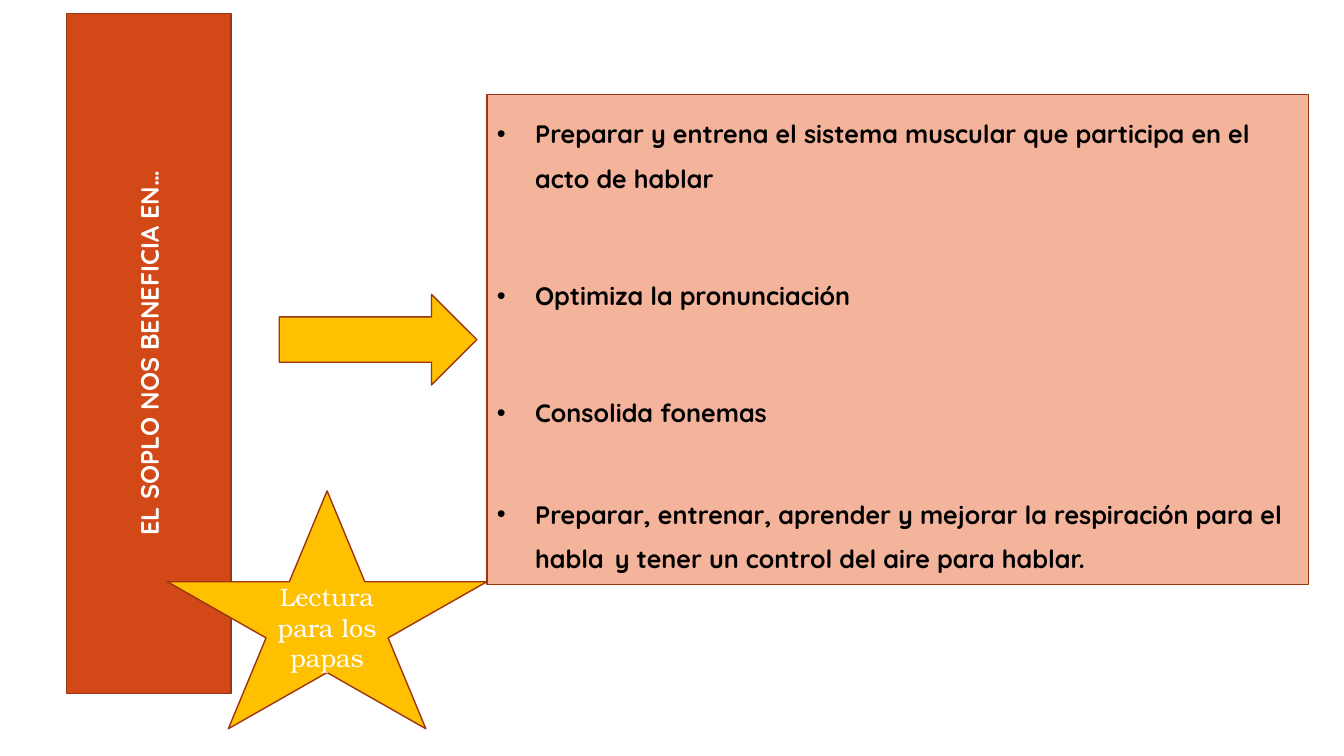
from dataclasses import dataclass

from lxml import etree
from pptx import Presentation
from pptx import util as u
from pptx.dml.color import RGBColor
from pptx.enum import shapes, text
from pptx.oxml import ns

COLORS = {
    "rust": "D34817",
    "outline": "9C3511",
    "gold": "FFC000",
    "salmon": "F4B39B",
    "white": "FFFFFF",
    "black": "000000",
}
BODY_FONT, STAR_FONT = "Quicksand", "TeX Gyre Bonum"
TEXT_SIZE, WIDE_SPACE_SIZE = 18, 28


@dataclass(frozen=True)
class Area:
    """Position and size in percent of the slide's width and height."""
    left: float
    top: float
    width: float
    height: float


@dataclass(frozen=True)
class Figure:
    kind: shapes.MSO_SHAPE
    area: Area
    fill: str


@dataclass(frozen=True)
class Benefit:
    pieces: tuple[str, ...]
    line_spacing: float = 1.5


TITLE_AREA = Area(-14.25, 35.87, 50.63, 21.73)
ARROW = Figure(shapes.MSO_SHAPE.RIGHT_ARROW, Area(20.78, 38.93, 14.7, 12), "gold")
PANEL = Figure(shapes.MSO_SHAPE.RECTANGLE, Area(36.23, 12.53, 61.13, 64.8), "salmon")
STAR = Figure(shapes.MSO_SHAPE.STAR_5_POINT, Area(12.45, 64.93, 23.78, 31.47), "gold")

BENEFITS = (
    Benefit(("Preparar y entrena el sistema muscular que participa en el acto de hablar",)),
    Benefit(("Optimiza la pronunciación",)),
    Benefit(("Consolida fonemas",)),
    Benefit(("Preparar, entrenar, aprender y mejorar la respiración para el habla", " ",
             "y tener un control del aire para hablar."), 1.0),
)

presentation = Presentation()
presentation.slide_width = u.Inches(13.33)
presentation.slide_height = u.Inches(7.5)


def color(name: str) -> RGBColor:
    return RGBColor.from_string(COLORS[name])


def place(area: Area) -> tuple[int, int, int, int]:
    width, height = presentation.slide_width, presentation.slide_height
    return (int(area.left * width / 100), int(area.top * height / 100),
            int(area.width * width / 100), int(area.height * height / 100))


def paint(shape, fill: str) -> None:
    shape.fill.solid()
    shape.fill.fore_color.rgb = color(fill)
    shape.line.color.rgb = color("outline")
    shape.line.width = u.Pt(1)


def add_figure(slide, figure: Figure):
    shape = slide.shapes.add_shape(figure.kind, *place(figure.area))
    shape.shadow.inherit = False
    paint(shape, figure.fill)
    return shape


def format_run(run, font: str, ink: str, bold: bool, size: int = TEXT_SIZE) -> None:
    run.font.name = font
    run.font.size = u.Pt(size)
    run.font.bold = bold
    run.font.color.rgb = color(ink)


def set_label(shape, label: str, font: str, bold: bool) -> None:
    frame = shape.text_frame
    frame.text = label
    frame.word_wrap = True
    frame.auto_size = text.MSO_AUTO_SIZE.NONE
    frame.vertical_anchor = text.MSO_ANCHOR.MIDDLE
    paragraph = frame.paragraphs[0]
    paragraph.alignment = text.PP_ALIGN.CENTER
    format_run(paragraph.runs[0], font, "white", bold)


def add_bullet(paragraph) -> None:
    properties = paragraph._p.get_or_add_pPr()
    properties.set("marL", str(u.Inches(0.38)))
    properties.set("indent", str(-u.Inches(0.38)))
    etree.SubElement(properties, ns.qn("a:buFont")).set("typeface", "Arial")
    etree.SubElement(properties, ns.qn("a:buChar")).set("char", "•")


def fill_benefits(shape, benefits: tuple[Benefit, ...]) -> None:
    frame = shape.text_frame
    frame.word_wrap = True
    frame.vertical_anchor = text.MSO_ANCHOR.MIDDLE
    for index, benefit in enumerate(benefits):
        paragraph = frame.add_paragraph() if index else frame.paragraphs[0]
        paragraph.alignment = text.PP_ALIGN.LEFT
        paragraph.line_spacing = benefit.line_spacing
        if index:
            paragraph.space_before = u.Pt(51)
        add_bullet(paragraph)
        for piece in benefit.pieces:
            run = paragraph.add_run()
            run.text = piece
            size = TEXT_SIZE if piece.strip() else WIDE_SPACE_SIZE
            format_run(run, BODY_FONT, "black", True, size)


# Title in an upright ellipse
slide = presentation.slides.add_slide(presentation.slide_layouts[5])
title = slide.shapes.title
title.left, title.top, title.width, title.height = place(TITLE_AREA)
title.rotation = 270
geometry = etree.SubElement(title._element.spPr, ns.qn("a:prstGeom"))
geometry.set("prst", "ellipse")
etree.SubElement(geometry, ns.qn("a:avLst"))
paint(title, "rust")
set_label(title, "EL SOPLO NOS BENEFICIA EN…", BODY_FONT, True)

# Arrow and list of benefits
add_figure(slide, ARROW)
fill_benefits(add_figure(slide, PANEL), BENEFITS)

# Star for the parents' reading
set_label(add_figure(slide, STAR), "Lectura para los papas", STAR_FONT, False)

presentation.save("out.pptx")
